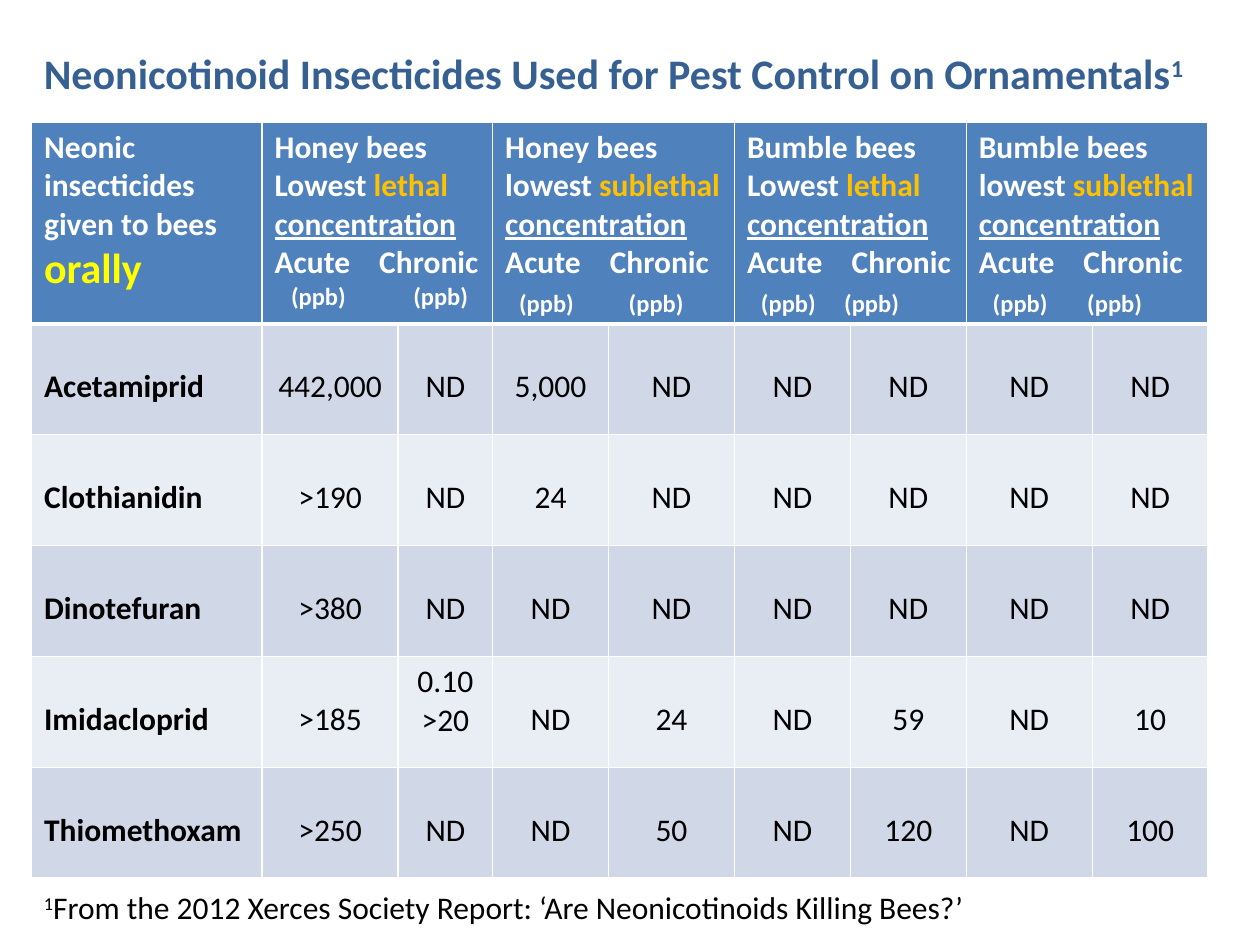
"""Build a slide tabulating neonicotinoid concentrations that affect bees."""
import dataclasses

import pptx
import pptx.dml.color
import pptx.enum.text
import pptx.oxml
import pptx.oxml.ns
import pptx.util
from pptx.util import Inches


@dataclasses.dataclass(frozen=True)
class Theme:
    """Hold the colours, type sizes and font of the slide."""
    font: str = "Calibri"
    title: str = "376092"
    header: str = "4F81BD"
    bands: tuple = ("D0D8E8", "E9EDF4")
    white: str = "FFFFFF"
    black: str = "000000"
    orange: str = "FFC000"
    yellow: str = "FFFF00"
    large: int = 24
    normal: int = 18
    small: int = 14


THEME = Theme()
COLUMN_WIDTHS = (1.83, 1.08, 0.75, 0.92, 1, 0.92, 0.92, 1, 0.92)
ROW_HEIGHTS = (1.5,) + (0.88,) * 5
MARGIN = 0.05
LINE_HEIGHT = 0.3
CHRONIC_TAB = 0.83
UNIT_TAB = 0.11
GROUPS = (
    ("Honey bees Lowest", "lethal", (0.13, 1.1), THEME.small),
    ("Honey bees lowest", "sublethal", (UNIT_TAB, 0.98), THEME.normal),
    ("Bumble bees Lowest", "lethal", (UNIT_TAB, 0.77), THEME.normal),
    ("Bumble bees lowest", "sublethal", (UNIT_TAB, 0.86), THEME.normal),
)
INSECTICIDES = (
    ("Acetamiprid", "442,000", "ND", "5,000", "ND", "ND", "ND", "ND", "ND"),
    ("Clothianidin", ">190", "ND", "24", "ND", "ND", "ND", "ND", "ND"),
    ("Dinotefuran", ">380", "ND", "ND", "ND", "ND", "ND", "ND", "ND"),
    ("Imidacloprid", ">185", "0.10\n>20", "ND", "24", "ND", "59", "ND", "10"),
    ("Thiomethoxam", ">250", "ND", "ND", "50", "ND", "120", "ND", "100"),
)


def add_span(para, text, color, raised=False, **formats):
    """Append a formatted run to a paragraph."""
    span = para.add_run()
    span.text = text
    values = {"name": THEME.font, "size": THEME.normal, "bold": False} | formats
    values["size"] = pptx.util.Pt(values["size"])
    for name, value in values.items():
        setattr(span.font, name, value)
    span.font.color.rgb = pptx.dml.color.RGBColor.from_string(color)
    if raised:
        span.font._element.set("baseline", "30000")


def add_tabs(para, positions):
    """Set left tab stops on a paragraph."""
    properties = para._p.get_or_add_pPr()
    stops = properties.makeelement(pptx.oxml.ns.qn("a:tabLst"), {})
    properties.append(stops)
    for position in positions:
        stop = stops.makeelement(
            pptx.oxml.ns.qn("a:tab"), {"pos": str(Inches(position)), "algn": "l"})
        stops.append(stop)


def add_text(page, left, top, width, height, spans):
    """Add a one-paragraph text box made of formatted spans."""
    box = page.shapes.add_textbox(
        Inches(left), Inches(top), Inches(width), Inches(height))
    formats = {"word_wrap": True,
               "auto_size": pptx.enum.text.MSO_AUTO_SIZE.SHAPE_TO_FIT_TEXT}
    for name, value in formats.items():
        setattr(box.text_frame, name, value)
    for text, values in spans:
        add_span(box.text_frame.paragraphs[0], text, **values)


def style_cell(cell, fill, top=1, bottom=1):
    """Give a cell its fill and white borders."""
    cell.fill.solid()
    cell.fill.fore_color.rgb = pptx.dml.color.RGBColor.from_string(fill)
    properties = cell._tc.get_or_add_tcPr()
    borders = {"lnL": 1, "lnR": 1, "lnT": top, "lnB": bottom}
    for index, (side, points) in enumerate(borders.items()):
        border = pptx.oxml.parse_xml(
            f'<a:{side} {pptx.oxml.ns.nsdecls("a")} w="{pptx.util.Pt(points)}">'
            f'<a:solidFill><a:srgbClr val="{THEME.white}"/></a:solidFill></a:{side}>')
        properties.insert(index, border)


def fill_group(cell, group):
    """Write the header of one bee group over its two columns."""
    opening, effect, unit_tabs, tab_size = group
    bold = {"color": THEME.white, "bold": True}
    frame = cell.text_frame
    para = frame.paragraphs[0]
    add_span(para, f"{opening} ", **bold)
    add_span(para, f"{effect} ", THEME.orange, bold=True)
    add_span(para, "concentration", underline=True, **bold)
    para = frame.add_paragraph()
    add_tabs(para, [CHRONIC_TAB])
    add_span(para, "Acute\tChronic", **bold)
    para = frame.add_paragraph()
    add_tabs(para, unit_tabs)
    add_span(para, "\t", size=tab_size, **bold)
    add_span(para, "(ppb)\t(ppb)", size=THEME.small, **bold)


def fill_value(cell, text, is_name):
    """Write an insecticide name or a concentration into a body cell."""
    lines = text.split("\n")
    cell.margin_top = Inches(MARGIN + LINE_HEIGHT * (2 - len(lines)))
    for index, line in enumerate(lines):
        frame = cell.text_frame
        para = frame.add_paragraph() if index else frame.paragraphs[0]
        if not is_name:
            para.alignment = pptx.enum.text.PP_ALIGN.CENTER
        add_span(para, line, THEME.black, bold=is_name)


def add_concentrations(page):
    """Add the table of insecticides and concentrations."""
    table = page.shapes.add_table(
        len(ROW_HEIGHTS), len(COLUMN_WIDTHS), Inches(0.25), Inches(0.97),
        Inches(sum(COLUMN_WIDTHS)), Inches(sum(ROW_HEIGHTS))).table
    for column, width in zip(table.columns, COLUMN_WIDTHS):
        column.width = Inches(width)
    for row, height in zip(table.rows, ROW_HEIGHTS):
        row.height = Inches(height)
    for column in range(len(COLUMN_WIDTHS)):
        style_cell(table.cell(0, column), THEME.header, bottom=3)
    para = table.cell(0, 0).text_frame.paragraphs[0]
    add_span(para, "Neonic insecticides given to bees ", THEME.white, bold=True)
    add_span(para, "orally", THEME.yellow, bold=True, size=THEME.large)
    for index, group in enumerate(GROUPS):
        column = 1 + 2 * index
        cell = table.cell(0, column)
        cell.merge(table.cell(0, column + 1))
        fill_group(cell, group)
    for row, values in enumerate(INSECTICIDES, start=1):
        for column, text in enumerate(values):
            cell = table.cell(row, column)
            style_cell(cell, THEME.bands[(row - 1) % 2], top=3 if row == 1 else 1)
            fill_value(cell, text, is_name=column == 0)


def main():
    """Build and save the deck."""
    deck = pptx.Presentation()
    deck.slide_width, deck.slide_height = Inches(10), Inches(7.5)
    page = deck.slides.add_slide(deck.slide_layouts[6])
    title = {"color": THEME.title, "size": THEME.large, "bold": True}
    add_text(page, 0.25, 0.33, 9.33, 1.25, [
        ("Neonicotinoid Insecticides Used for Pest Control on Ornamentals", title),
        ("1", title | {"raised": True})])
    add_concentrations(page)
    note = {"color": THEME.black}
    add_text(page, 0.25, 7, 8.25, 0.4, [
        ("1", note | {"raised": True}),
        ("From the 2012 Xerces Society Report: ‘Are Neonicotinoids Killing Bees?’",
         note)])
    deck.save("out.pptx")


if __name__ == "__main__":
    main()
